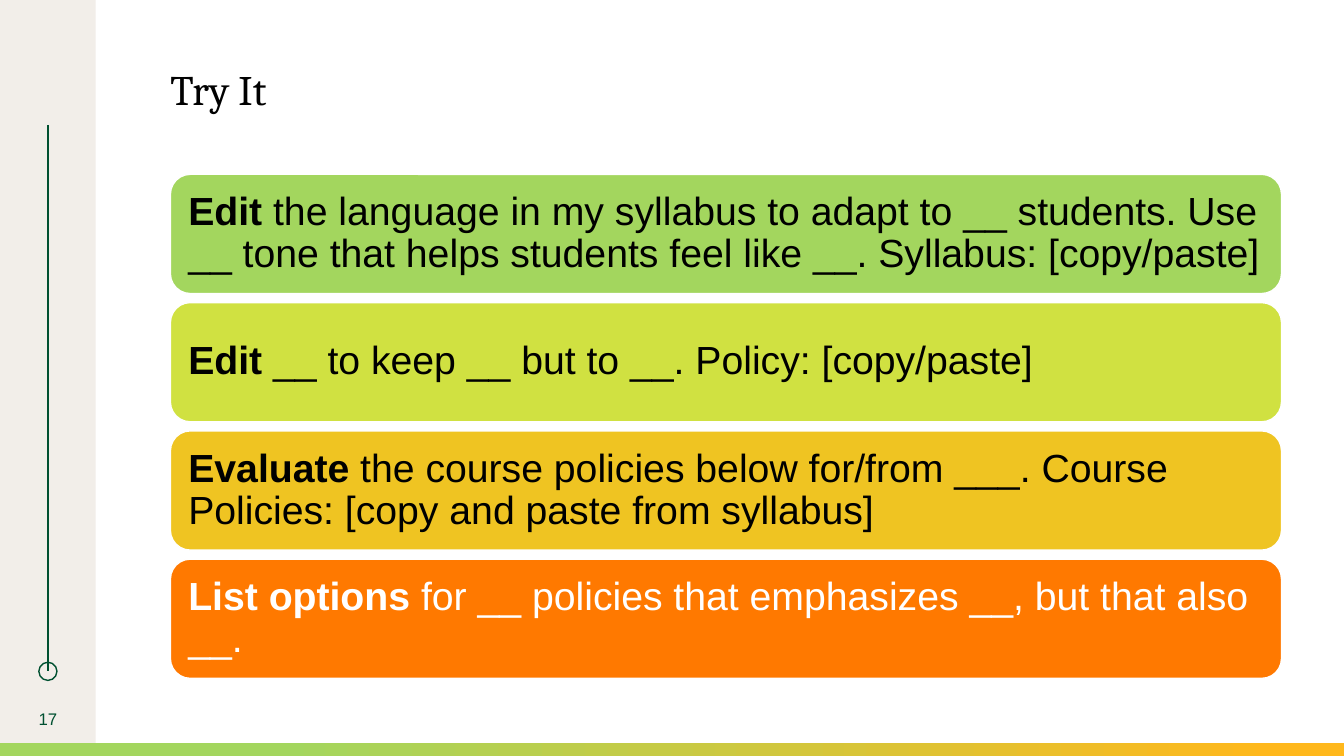
from lxml import etree
from pptx import Presentation
from pptx import util as u
from pptx.dml.color import RGBColor
from pptx.enum import shapes, text
from pptx.oxml.ns import qn

WIDTH, HEIGHT = 13.33, 7.5
SIDEBAR_WIDTH = 0.95
COLOURS = {
    "sand": "F2EEE9", "forest": "005030", "amber": "FFB81C",
    "green": "A3D65E", "lime": "D0E141", "gold": "EFC422",
    "orange": "FF7900", "black": "000000", "white": "FFFFFF",
}
PROMPTS = [
    ("Edit", " the language in my syllabus to adapt to __ students. Use __ tone "
     "that helps students feel like __. Syllabus: [copy/paste]", "green", "black"),
    ("Edit", " __ to keep __ but to __. Policy: [copy/paste]", "lime", "black"),
    ("Evaluate", " the course policies below for/from ___. Course Policies: "
     "[copy and paste from syllabus]", "gold", "black"),
    ("List options ", "for __ policies that emphasizes __, but that also __.",
     "orange", "white"),
]


def rgb(name):
    return RGBColor.from_string(COLOURS[name])


def inches(box):
    return [u.Inches(length) for length in box]


def write(frame, runs, size, colour, font="Arial", align=text.PP_ALIGN.LEFT,
          anchor=text.MSO_ANCHOR.MIDDLE, inset=0, spacing=1.0):
    """Fill a text frame with one paragraph of (wording, bold) runs."""
    frame.word_wrap = True
    frame.auto_size = text.MSO_AUTO_SIZE.NONE
    frame.vertical_anchor = anchor
    frame.margin_left = frame.margin_right = u.Inches(inset)
    frame.margin_top = frame.margin_bottom = u.Inches(inset)
    paragraph = frame.paragraphs[0]
    paragraph.alignment = align
    paragraph.line_spacing = spacing
    for wording, bold in runs:
        run = paragraph.add_run()
        run.text = wording
        run.font.name, run.font.size, run.font.bold = font, u.Pt(size), bold
        run.font.color.rgb = rgb(colour)


def add_block(slide, kind, box, fill=None, line=None):
    block = slide.shapes.add_shape(kind, *inches(box))
    block.shadow.inherit = False
    if fill:
        block.fill.solid()
        block.fill.fore_color.rgb = rgb(fill)
    else:
        block.fill.background()
    if line:
        block.line.color.rgb = rgb(line)
        block.line.width = u.Pt(1)
    else:
        block.line.fill.background()
    return block


def add_sidebar(slide, box, number):
    left, top, width, height = box
    add_block(slide, shapes.MSO_SHAPE.RECTANGLE, box, "sand")

    # Vertical rule ending in a ring
    middle, rule_end, ring = left + width / 2, top + 6.66, 0.18
    rule = slide.shapes.add_connector(
        shapes.MSO_CONNECTOR.STRAIGHT,
        *inches((middle, top + 1.24, middle, rule_end)))
    rule.line.color.rgb = rgb("forest")
    rule.line.width = u.Pt(1)
    etree.SubElement(rule._element.spPr, qn("a:effectLst"))
    add_block(slide, shapes.MSO_SHAPE.OVAL,
              (middle - ring / 2, rule_end - ring / 2, ring, ring), line="forest")

    # Slide number
    page = slide.shapes.add_textbox(*inches((left, top + 6.93, width, 0.4)))
    write(page.text_frame, [(number, False)], 12, "forest",
          align=text.PP_ALIGN.CENTER)


def add_footer_band(slide, box):
    band = add_block(slide, shapes.MSO_SHAPE.RECTANGLE, box, "green")
    band.fill.gradient()
    band.fill.gradient_angle = 180
    stops = [("amber", 0.05), ("green", 0.79)]
    for stop, (colour, position) in zip(band.fill.gradient_stops, stops):
        stop.color.rgb = rgb(colour)
        stop.position = position


def add_title(slide, box, wording):
    title = slide.shapes.title
    title.left, title.top, title.width, title.height = inches(box)
    write(title.text_frame, [(wording, False)], 30, "black", font="Cambria",
          anchor=text.MSO_ANCHOR.TOP, spacing=0.9)


def add_prompts(slide, box, prompts, gap=0.09):
    left, top, width, height = box
    row_height = (height - gap * (len(prompts) - 1)) / len(prompts)
    for row, (verb, rest, fill, colour) in enumerate(prompts):
        row_top = top + row * (row_height + gap)
        card = add_block(slide, shapes.MSO_SHAPE.ROUNDED_RECTANGLE,
                         (left, row_top, width, row_height), fill, "white")
        write(card.text_frame, [(verb, True), (rest, False)], 28, colour,
              inset=0.12, spacing=0.9)


def main():
    deck = Presentation()
    deck.slide_width, deck.slide_height = inches((WIDTH, HEIGHT))
    slide = deck.slides.add_slide(deck.slide_layouts[5])
    add_sidebar(slide, (0, 0, SIDEBAR_WIDTH, HEIGHT), "17")
    add_footer_band(slide, (0, HEIGHT - 0.13, WIDTH, 0.13))
    add_title(slide, (1.69, 0.69, 4.12, 0.45), "Try It")
    add_prompts(slide, (1.69, 1.73, 11.02, 5), PROMPTS)
    deck.save("out.pptx")


if __name__ == "__main__":
    main()
